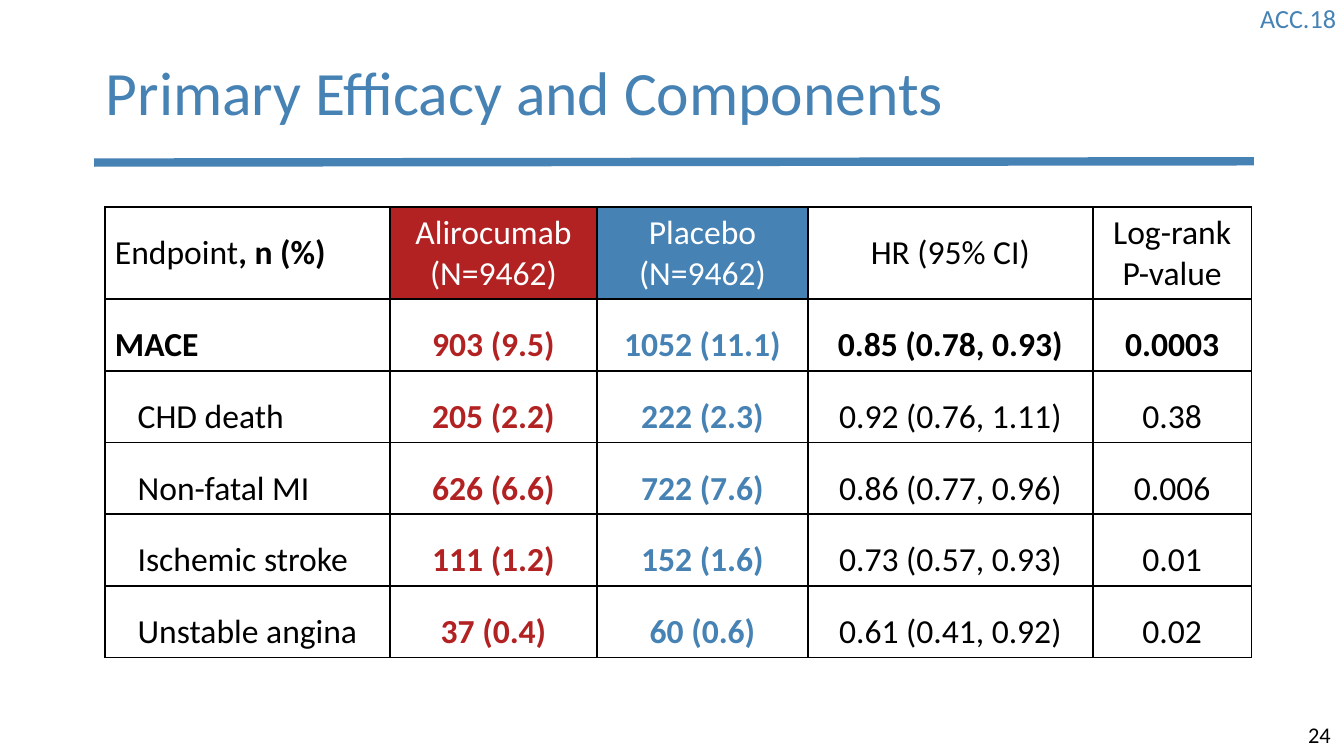
from lxml import etree
from pptx import Presentation
from pptx.dml.color import RGBColor
from pptx.enum import shapes, text
from pptx.oxml import ns
from pptx.util import Pt

FONT = "Calibri"
COLORS = {"blue": "4682B4", "red": "B22222", "black": "000000", "white": "FFFFFF"}
COL_WIDTHS = [152.6, 111, 113, 152.6, 85]
HEADER_HEIGHT, ROW_HEIGHT = 49.3, 38.4
COMPONENT_INDENT = 12.2

HEADER = [
    (["Endpoint", ", n (%)"], "white", "black"),
    (["Alirocumab\n(N=9462)"], "red", "white"),
    (["Placebo\n(N=9462)"], "blue", "white"),
    (["HR (95% CI)"], "white", "black"),
    (["Log-rank P-value"], "white", "black"),
]
ENDPOINTS = [
    ["MACE", "903 (9.5)", "1052 (11.1)", "0.85 (0.78, 0.93)", "0.0003"],
    ["CHD death", "205 (2.2)", "222 (2.3)", "0.92 (0.76, 1.11)", "0.38"],
    ["Non-fatal MI", "626 (6.6)", "722 (7.6)", "0.86 (0.77, 0.96)", "0.006"],
    ["Ischemic stroke", "111 (1.2)", "152 (1.6)", "0.73 (0.57, 0.93)", "0.01"],
    ["Unstable angina", "37 (0.4)", "60 (0.6)", "0.61 (0.41, 0.92)", "0.02"],
]
COLUMN_COLORS = ["black", "red", "blue", "black", "black"]


def rgb(name):
    return RGBColor.from_string(COLORS[name])


def set_font(font, size, color, bold=None):
    font.name, font.size, font.bold = FONT, Pt(size), bold
    font.color.rgb = rgb(color)


def add_text(s, box, content, size, color, align=text.PP_ALIGN.LEFT):
    tf = s.shapes.add_textbox(*map(Pt, box)).text_frame
    tf.word_wrap = True
    p = tf.paragraphs[0]
    p.text, p.alignment = content, align
    set_font(p.font, size, color)
    return tf


def add_title(s, content):
    tf = add_text(s, (49.7, 12.2, 620.6, 78.5), content, 33, "blue")
    tf.vertical_anchor = text.MSO_ANCHOR.MIDDLE
    tf.paragraphs[0].line_spacing = 0.9


def add_rule(s):
    line = s.shapes.add_connector(
        shapes.MSO_CONNECTOR.STRAIGHT, Pt(50.4), Pt(87.1), Pt(671.8), Pt(86.4))
    line.line.color.rgb = rgb("blue")
    line.line.width = Pt(4.5)
    etree.SubElement(line._element.spPr, ns.qn("a:effectLst"))


def add_borders(cell):
    """Draw a 1 pt black line on each side, ahead of the cell's fill."""
    tcPr = cell._tc.get_or_add_tcPr()
    for i, side in enumerate(("lnL", "lnR", "lnT", "lnB")):
        ln = etree.Element(ns.qn(f"a:{side}"), w=str(Pt(1)))
        fill = etree.SubElement(ln, ns.qn("a:solidFill"))
        etree.SubElement(fill, ns.qn("a:srgbClr"), val=COLORS["black"])
        tcPr.insert(i, ln)


def style_cell(cell, fill=None):
    cell.vertical_anchor = text.MSO_ANCHOR.MIDDLE
    cell.margin_left = cell.margin_right = Pt(5.3)
    cell.margin_top = cell.margin_bottom = Pt(2.7)
    if fill:
        cell.fill.solid()
        cell.fill.fore_color.rgb = rgb(fill)
    else:
        cell.fill.background()
    add_borders(cell)


def column_align(col):
    return text.PP_ALIGN.CENTER if col else text.PP_ALIGN.LEFT


def fill_header(table):
    for col, (runs, fill, color) in enumerate(HEADER):
        cell = table.cell(0, col)
        style_cell(cell, fill)
        cell.text = runs[0]
        for p in cell.text_frame.paragraphs:
            p.alignment = column_align(col)
            set_font(p.font, 18, color, False)
        for extra in runs[1:]:
            r = p.add_run()
            r.text, r.font.bold = extra, True


def fill_endpoint(table, row, values):
    is_total = row == 1
    for col, value in enumerate(values):
        cell = table.cell(row, col)
        style_cell(cell)
        p = cell.text_frame.paragraphs[0]
        p.text, p.alignment, p.line_spacing = value, column_align(col), 1.5
        if col == 0 and not is_total:
            p._p.get_or_add_pPr().set("marL", str(Pt(COMPONENT_INDENT)))
        color = COLUMN_COLORS[col]
        set_font(p.font, 18, color, is_total or color != "black")


def add_results_table(s):
    height = HEADER_HEIGHT + ROW_HEIGHT * len(ENDPOINTS)
    table = s.shapes.add_table(
        len(ENDPOINTS) + 1, len(HEADER), Pt(56.3), Pt(111),
        Pt(sum(COL_WIDTHS)), Pt(height)).table
    table.first_row = table.horz_banding = False
    for column, width in zip(table.columns, COL_WIDTHS):
        column.width = Pt(width)
    for i, row in enumerate(table.rows):
        row.height = Pt(ROW_HEIGHT if i else HEADER_HEIGHT)
    fill_header(table)
    for i, values in enumerate(ENDPOINTS, 1):
        fill_endpoint(table, i, values)


def main():
    prs = Presentation()
    prs.slide_width, prs.slide_height = Pt(720), Pt(405)
    s = prs.slides.add_slide(prs.slide_layouts[6])
    add_rule(s)
    right = text.PP_ALIGN.RIGHT
    add_text(s, (612, -2.2, 110.9, 24.2), "ACC.18", 14, "blue", right)
    add_text(s, (609, 383, 111, 21.8), "24", 12, "black", right)
    add_title(s, "Primary Efficacy and Components")
    add_results_table(s)
    prs.save("out.pptx")


if __name__ == "__main__":
    main()
